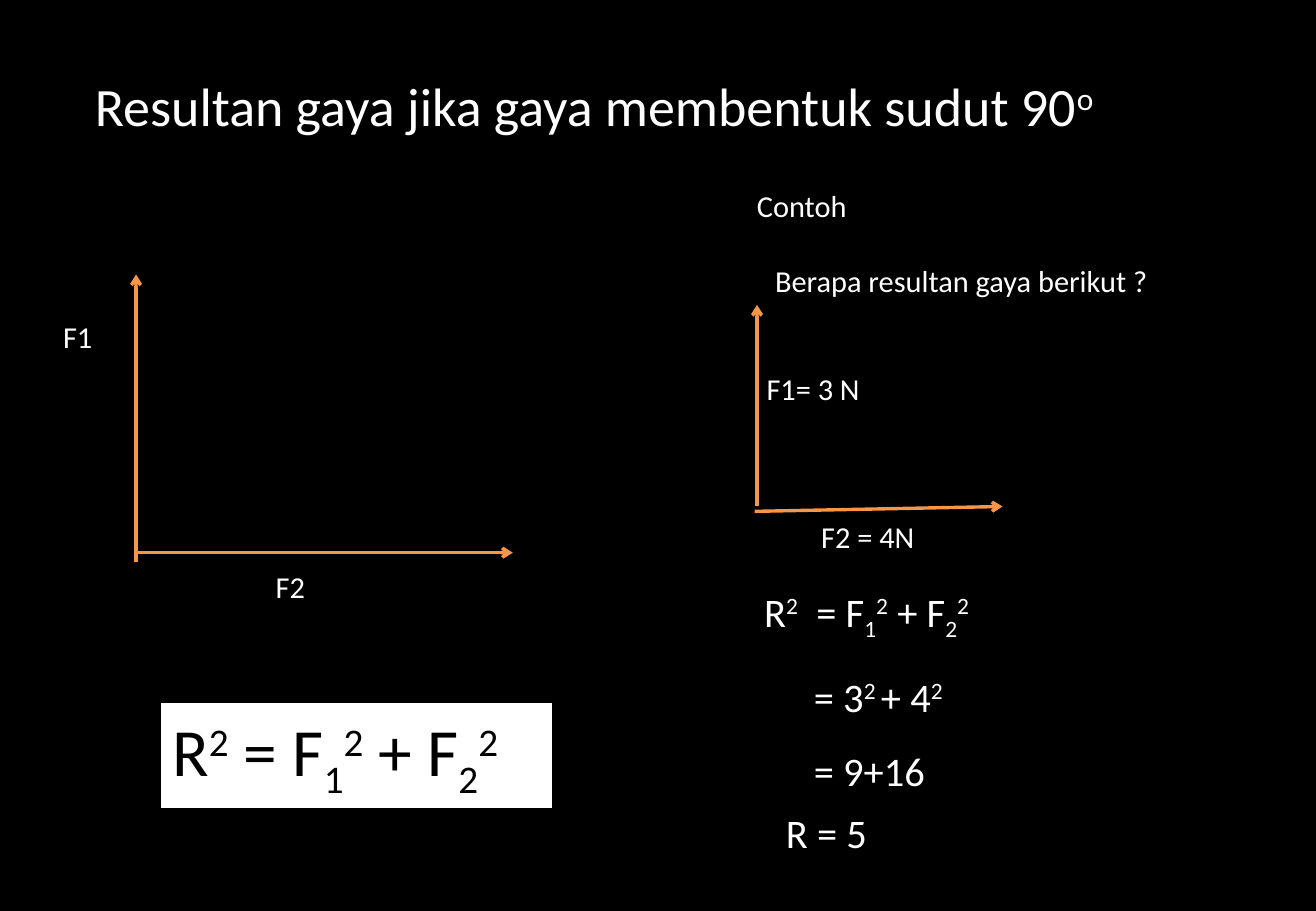
from lxml.etree import SubElement
from pptx import Presentation
from pptx.dml.color import RGBColor
from pptx.enum.shapes import MSO_CONNECTOR, MSO_SHAPE
from pptx.enum.text import MSO_ANCHOR, MSO_AUTO_SIZE, PP_ALIGN
from pptx.oxml.ns import qn
from pptx.util import Emu, Pt

EMU_PER_PX = 9144  # 100 px to the inch
BLACK, WHITE, ORANGE = "000000", "FFFFFF", "F79646"
SUPER, SUB = 30000, -25000


def px(length):
    return Emu(length * EMU_PER_PX)


def color(hex_string):
    return RGBColor.from_string(hex_string)


def resultant(equals):
    """Runs of the formula R² = F1² + F2², given the text before the first F."""
    return [("R", 0), ("2", SUPER), (equals + "F", 0), ("1", SUB), ("2", SUPER),
            (" + F", 0), ("2", SUB), ("2", SUPER)]


class ForceSlide:
    """Holds the style and the current slide."""
    font_name = "Calibri"
    text_color = WHITE
    arrow_color = ORANGE
    arrow_width = Pt(2)

    def __init__(self, presentation):
        self.slide = presentation.slides.add_slide(presentation.slide_layouts[5])
        background = self.slide.background.fill
        background.solid()
        background.fore_color.rgb = color(BLACK)

    def fill_text(self, shape, runs, size, text_color=None, anchor=MSO_ANCHOR.TOP):
        """Fill a shape with one left-aligned paragraph of (text, baseline) runs."""
        frame = shape.text_frame
        frame.word_wrap = True
        frame.auto_size = MSO_AUTO_SIZE.NONE
        frame.vertical_anchor = anchor
        paragraph = frame.paragraphs[0]
        paragraph.alignment = PP_ALIGN.LEFT
        for text, baseline in runs:
            run = paragraph.add_run()
            run.text = text
            run.font.name = self.font_name
            run.font.size = Pt(size)
            run.font.color.rgb = color(text_color or self.text_color)
            if baseline:
                run._r.get_or_add_rPr().set("baseline", str(baseline))
        return paragraph

    def title(self, box, runs, size):
        shape = self.slide.shapes.title
        shape.left, shape.top, shape.width, shape.height = map(px, box)
        self.fill_text(shape, runs, size)

    def text(self, box, runs, size, tab=None):
        shape = self.slide.shapes.add_textbox(*map(px, box))
        paragraph = self.fill_text(shape, runs, size)
        if tab:
            tabs = SubElement(paragraph._p.get_or_add_pPr(), qn("a:tabLst"))
            SubElement(tabs, qn("a:tab"), pos=str(px(tab)), algn="l")

    def panel(self, box, runs, size):
        shape = self.slide.shapes.add_shape(MSO_SHAPE.RECTANGLE, *map(px, box))
        shape.shadow.inherit = False
        shape.fill.solid()
        shape.fill.fore_color.rgb = color(WHITE)
        shape.line.color.rgb = color(BLACK)
        shape.line.width = Pt(0.75)
        self.fill_text(shape, runs, size, BLACK, MSO_ANCHOR.MIDDLE)

    def arrow(self, *ends):
        connector = self.slide.shapes.add_connector(MSO_CONNECTOR.STRAIGHT, *map(px, ends))
        connector.line.color.rgb = color(self.arrow_color)
        connector.line.width = self.arrow_width
        SubElement(connector.line._get_or_add_ln(), qn("a:tailEnd"), type="arrow")
        SubElement(connector._element.spPr, qn("a:effectLst"))


def main():
    presentation = Presentation()
    presentation.slide_width, presentation.slide_height = px(1083), px(750)
    page = ForceSlide(presentation)

    page.title((68, 55, 853, 64),
               [("Resultan gaya jika gaya membentuk sudut 90", 0), ("o", SUPER)], 32)

    for ends in [(114, 455, 422, 455), (112, 463, 112, 226),
                 (621, 421, 825, 417), (623, 417, 623, 251)]:
        page.arrow(*ends)

    for left, top, width, label in [
        (42, 257, 51, "F1"),
        (217, 463, 51, "F2"),
        (613, 149, 101, "Contoh"),
        (628, 211, 330, "Berapa resultan gaya berikut ?"),
        (621, 300, 116, "F1= 3 N"),
        (666, 422, 125, "F2 = 4N"),
    ]:
        page.text((left, top, width, 40), [(label, 0)], 18)

    page.panel((132, 578, 323, 88), resultant(" = "), 40)

    page.text((619, 478, 222, 50), resultant("\t= "), 24, tab=43)
    for left, top, runs in [
        (660, 548, [("= 3", 0), ("2 ", SUPER), ("+ 4", 0), ("2", SUPER)]),
        (660, 609, [("= 9+16", 0)]),
        (637, 660, [("R = 5", 0)]),
    ]:
        page.text((left, top, 134, 50), runs, 24)

    presentation.save("out.pptx")


if __name__ == "__main__":
    main()
